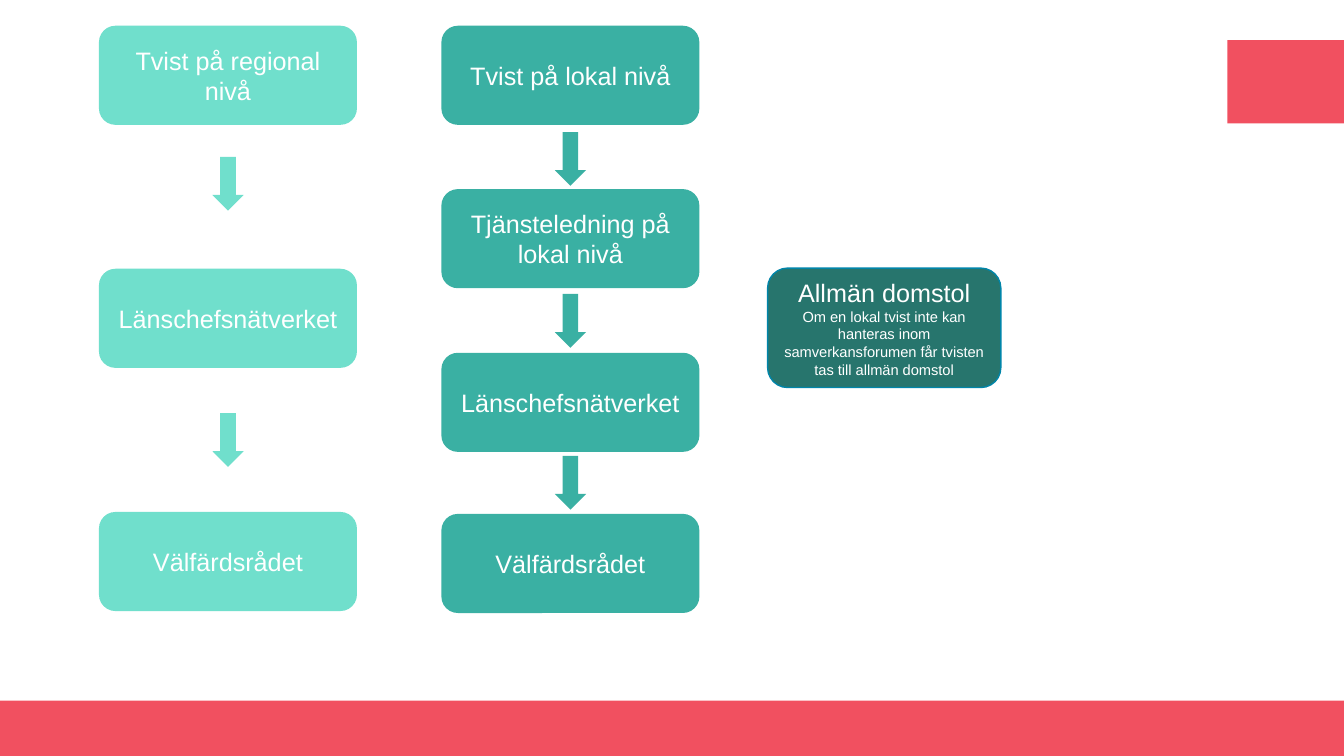
from dataclasses import dataclass

from pptx import Presentation
from pptx.dml.color import RGBColor
from pptx.enum.shapes import MSO_SHAPE as Preset
from pptx.enum.text import MSO_ANCHOR as Anchor, PP_ALIGN as Align
from pptx.shapes.autoshape import Shape
from pptx.slide import Slide
from pptx.util import Pt


@dataclass(frozen=True)
class Theme:
    band: str = "F15060"
    regional: str = "70DFCC"
    local: str = "3AB0A3"
    court: str = "27756D"
    court_line: str = "0085A9"
    text: str = "FFFFFF"
    font: str = "Arial"
    heading_size: float = 18
    detail_size: float = 10.5


@dataclass(frozen=True)
class Frame:
    left: float
    top: float
    width: float
    height: float


@dataclass(frozen=True)
class Step:
    label: str
    top: float


@dataclass(frozen=True)
class DisputeColumn:
    left: float
    color: str
    steps: tuple[Step, ...]
    arrow_tops: tuple[float, ...]


THEME = Theme()
PAGE_WIDTH, PAGE_HEIGHT = 960, 540
STEP_WIDTH, STEP_HEIGHT = 184.3, 70.8
ARROW_WIDTH, ARROW_HEIGHT = 22.3, 38.4

BANDS = (
    Frame(0, 500.4, PAGE_WIDTH, 39.6),
    Frame(876.7, 28.6, 83.3, 59.6),
)
COLUMNS = (
    DisputeColumn(
        70.7,
        THEME.regional,
        (
            Step("Tvist på regional nivå", 18.4),
            Step("Länschefsnätverket", 192),
            Step("Välfärdsrådet", 365.7),
        ),
        (112, 295),
    ),
    DisputeColumn(
        315.3,
        THEME.local,
        (
            Step("Tvist på lokal nivå", 18.4),
            Step("Tjänsteledning på lokal nivå", 135.1),
            Step("Länschefsnätverket", 252),
            Step("Välfärdsrådet", 367.1),
        ),
        (94.3, 210, 325.6),
    ),
)
COURT_FRAME = Frame(548.3, 191.5, 166.6, 85.3)
COURT_HEADING = "Allmän domstol"
COURT_DETAIL = (
    "Om en lokal tvist inte kan hanteras inom samverkansforumen "
    "får tvisten tas till allmän domstol"
)


def add_block(page: Slide, preset: Preset, frame: Frame, color: str) -> Shape:
    """Add a flat filled shape without outline or shadow."""
    block = page.shapes.add_shape(
        preset, Pt(frame.left), Pt(frame.top), Pt(frame.width), Pt(frame.height)
    )
    block.shadow.inherit = False
    block.fill.solid()
    block.fill.fore_color.rgb = RGBColor.from_string(color)
    block.line.fill.background()
    return block


def add_text_box(
    page: Slide, frame: Frame, color: str, heading: str, detail: str = ""
) -> Shape:
    """Add a rounded box with a heading and, below it, an optional smaller detail."""
    box = add_block(page, Preset.ROUNDED_RECTANGLE, frame, color)
    text_frame = box.text_frame
    text_frame.word_wrap = True
    text_frame.vertical_anchor = Anchor.MIDDLE
    text_frame.text = f"{heading}\n{detail}" if detail else heading
    sizes = (THEME.heading_size, THEME.detail_size)
    for para, size in zip(text_frame.paragraphs, sizes):
        para.alignment = Align.CENTER
        for span in para.runs:
            span.font.name = THEME.font
            span.font.size = Pt(size)
            span.font.color.rgb = RGBColor.from_string(THEME.text)
    return box


def add_column(page: Slide, column: DisputeColumn) -> None:
    for step in column.steps:
        frame = Frame(column.left, step.top, STEP_WIDTH, STEP_HEIGHT)
        add_text_box(page, frame, column.color, step.label)
    arrow_left = column.left + (STEP_WIDTH - ARROW_WIDTH) / 2
    for top in column.arrow_tops:
        frame = Frame(arrow_left, top, ARROW_WIDTH, ARROW_HEIGHT)
        add_block(page, Preset.DOWN_ARROW, frame, column.color)


def main() -> None:
    deck = Presentation()
    deck.slide_width, deck.slide_height = Pt(PAGE_WIDTH), Pt(PAGE_HEIGHT)
    page = deck.slides.add_slide(deck.slide_layouts[6])
    for band in BANDS:
        add_block(page, Preset.RECTANGLE, band, THEME.band)
    for column in COLUMNS:
        add_column(page, column)
    court = add_text_box(page, COURT_FRAME, THEME.court, COURT_HEADING, COURT_DETAIL)
    court.line.color.rgb = RGBColor.from_string(THEME.court_line)
    court.line.width = Pt(1)
    deck.save("out.pptx")


if __name__ == "__main__":
    main()
